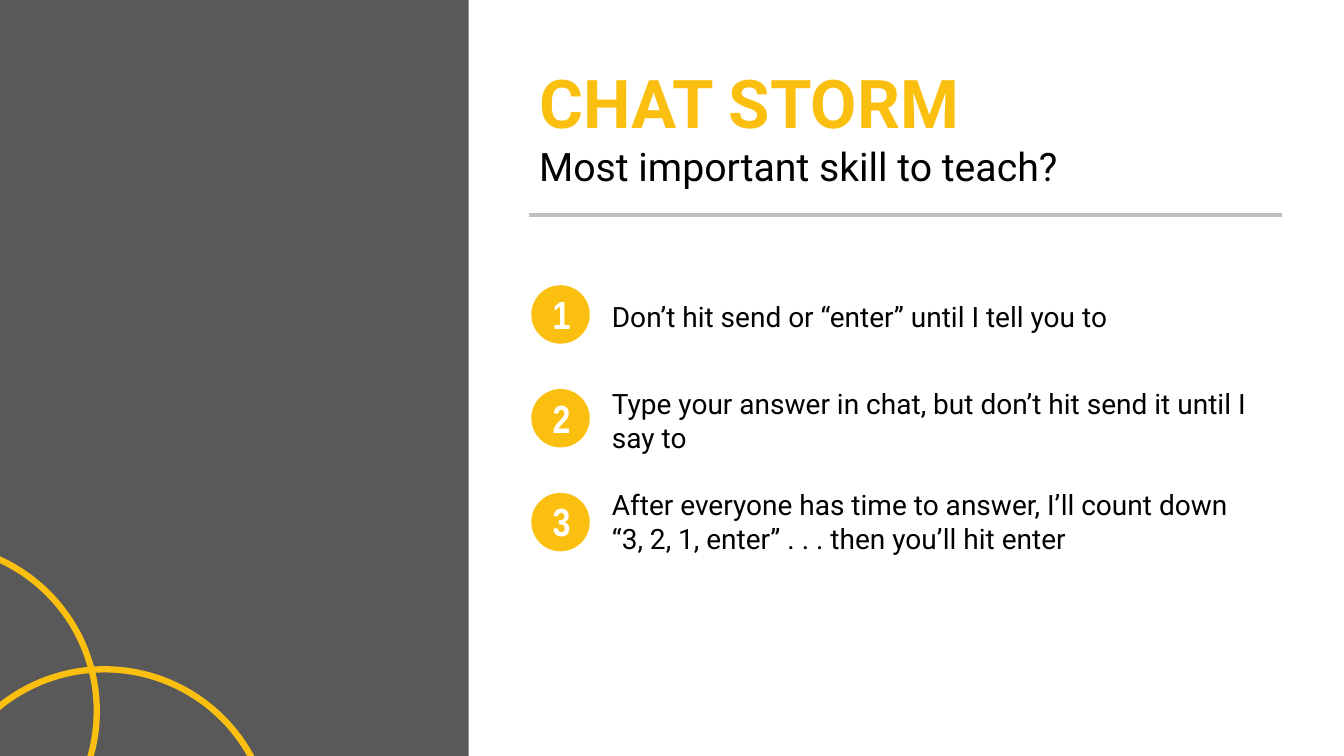
import pptx
import pptx.util
import pptx.dml.color
import pptx.enum.shapes
import pptx.enum.text
import pptx.oxml.ns
from lxml import etree

THEME = {
    "gold": "FBBF10", "panel": "595959", "rule": "BFBFBF",
    "ink": "000000", "white": "FFFFFF",
    "body_font": "Roboto", "number_font": "Arial Narrow",
    "title": 48, "subtitle": 28, "number": 28, "body": 20,
    "ring_line": 4.5, "rule_line": 3,
}
OVAL = pptx.enum.shapes.MSO_SHAPE.OVAL

deck = pptx.Presentation()
deck.slide_width = pptx.util.Inches(13.33)
deck.slide_height = pptx.util.Inches(7.5)
slide = deck.slides.add_slide(deck.slide_layouts[6])

# One column and one row are each 1 % of the slide
col, row = deck.slide_width / 100, deck.slide_height / 100


def add_figure(kind, left, top, width, height, fill=None, line=None):
    figure = slide.shapes.add_shape(
        kind, int(left * col), int(top * row), int(width * col), int(height * row))
    figure.shadow.inherit = False
    if fill:
        figure.fill.solid()
        figure.fill.fore_color.rgb = pptx.dml.color.RGBColor.from_string(THEME[fill])
    else:
        figure.fill.background()
    if line:
        figure.line.color.rgb = pptx.dml.color.RGBColor.from_string(THEME[line])
        figure.line.width = pptx.util.Pt(THEME["ring_line"])
    else:
        figure.line.fill.background()


def add_text(left, top, width, height, lines, font="body_font", centred=False):
    """Each line is (text, size, colour, bold)."""
    frame = slide.shapes.add_textbox(
        int(left * col), int(top * row), int(width * col), int(height * row)).text_frame
    frame.word_wrap = True
    frame.auto_size = pptx.enum.text.MSO_AUTO_SIZE.SHAPE_TO_FIT_TEXT
    frame.text = "\n".join(line[0] for line in lines)
    for paragraph, (_, size, colour, bold) in zip(frame.paragraphs, lines):
        if centred:
            paragraph.alignment = pptx.enum.text.PP_ALIGN.CENTER
        run_font = paragraph.runs[0].font
        run_font.name = THEME[font]
        run_font.size = pptx.util.Pt(THEME[size])
        run_font.bold = bold
        run_font.color.rgb = pptx.dml.color.RGBColor.from_string(THEME[colour])


# Side panel with two rings running off its corner
add_figure(pptx.enum.shapes.MSO_SHAPE.RECTANGLE, 0, 0, 34.88, 100, fill="panel")
for ring_left, ring_top in [(-17.63, 72), (-4.65, 88.53)]:
    add_figure(OVAL, ring_left, ring_top, 24.83, 44.13, line="gold")

# Heading and rule
add_text(39.38, 7.47, 55.74, 18.4, [
    ("CHAT STORM", "title", "gold", True),
    ("Most important skill to teach?", "subtitle", "ink", False),
])
heading_rule = slide.shapes.add_connector(
    pptx.enum.shapes.MSO_CONNECTOR.STRAIGHT,
    int(39.38 * col), int(28.4 * row), int(95.42 * col), int(28.4 * row))
heading_rule.line.color.rgb = pptx.dml.color.RGBColor.from_string(THEME["rule"])
heading_rule.line.width = pptx.util.Pt(THEME["rule_line"])
etree.SubElement(heading_rule.element.spPr, pptx.oxml.ns.qn("a:effectLst"))

# Numbered steps: text, its top and height
steps = [
    ("Don’t hit send or “enter” until I tell you to", 38.93, 5.87),
    ("Type your answer in chat, but don’t hit send it until I say to", 50.53, 10.27),
    ("After everyone has time to answer, I’ll count down “3, 2, 1, enter” "
     ". . . then you’ll hit enter", 63.87, 10.27),
]
for index, (step, step_top, step_height) in enumerate(steps):
    badge_top = 37.73 + index * 13.73
    add_text(44.79, step_top, 48.84, step_height, [(step, "body", "ink", False)])
    add_figure(OVAL, 39.53, badge_top, 4.35, 7.73, fill="gold")
    add_text(39.61, badge_top, 4.35, 7.6, [(str(index + 1), "number", "white", True)],
             font="number_font", centred=True)

deck.save("out.pptx")
